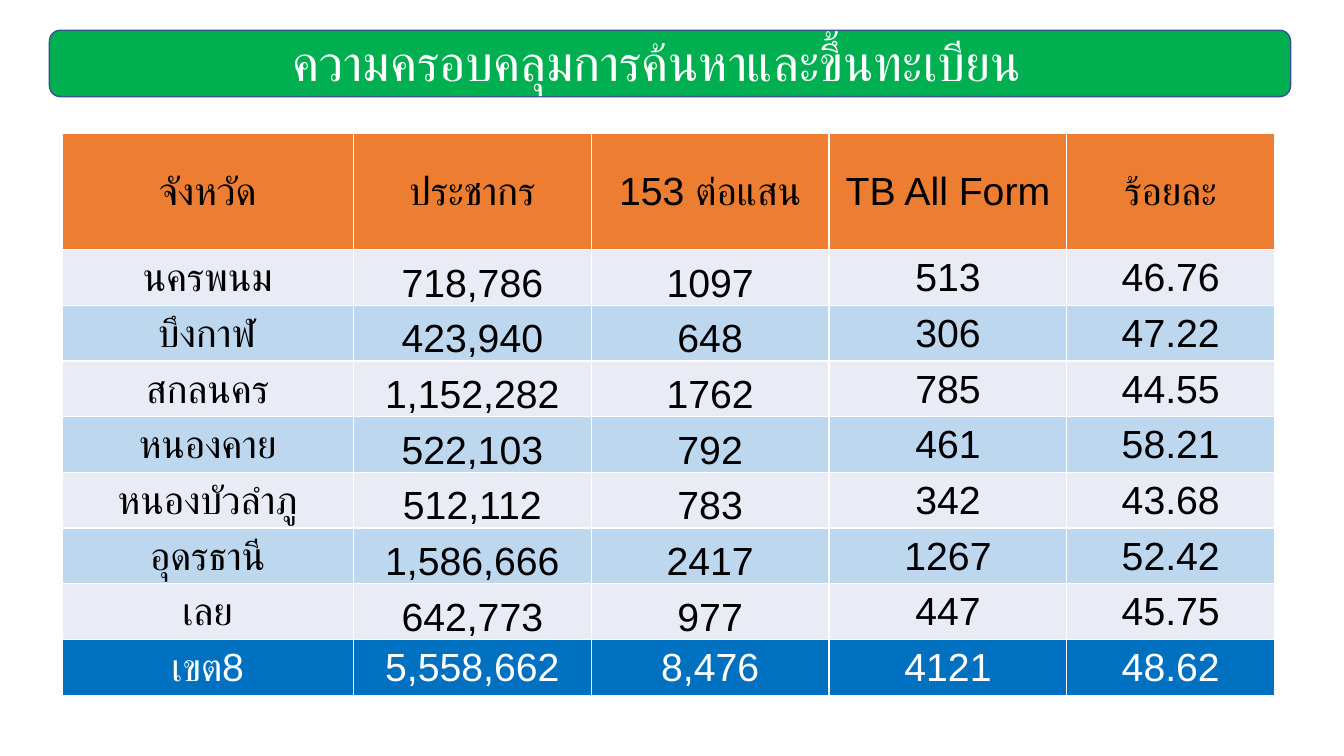
from dataclasses import dataclass

from lxml.etree import SubElement
from pptx import Presentation
from pptx.dml.color import RGBColor
from pptx.enum.shapes import MSO_SHAPE
from pptx.enum.text import MSO_ANCHOR, MSO_AUTO_SIZE, PP_ALIGN
from pptx.oxml.ns import qn
from pptx.slide import Slide
from pptx.util import Inches, Pt

SLIDE_WIDTH = Inches(13.33)
SLIDE_HEIGHT = Inches(7.5)


@dataclass(frozen=True)
class Theme:
    font: str = "Arial"
    title_size: int = 36
    table_size: int = 28
    light_text: str = "FFFFFF"
    dark_text: str = "000000"
    banner: str = "00B050"
    banner_line: str = "325491"
    header: str = "ED7D31"
    bands: tuple[str, str] = ("E9EBF5", "BDD7EE")
    total: str = "0070C0"


@dataclass(frozen=True)
class Frame:
    left: float
    top: float
    width: float
    height: float

    def place(self) -> tuple[int, int, int, int]:
        return (across(self.left), down(self.top), across(self.width), down(self.height))


@dataclass(frozen=True)
class RowStyle:
    fill: str
    text: str
    anchors: tuple[MSO_ANCHOR, ...]


def across(percent: float) -> int:
    return round(SLIDE_WIDTH * percent / 100)


def down(percent: float) -> int:
    return round(SLIDE_HEIGHT * percent / 100)


THEME = Theme()
TITLE = "ความครอบคลุมการค้นหาและขึ้นทะเบียน"
BANNER_FRAME = Frame(3.68, 4, 92.35, 8.8)
TITLE_FRAME = Frame(8.18, 3.47, 81.4, 9.47)
COLUMN_WIDTHS = (21.68, 17.7, 17.7, 17.7, 15.45)
HEADER_HEIGHT = 15.33
ROW_HEIGHT = 7.37

COVERAGE = (
    ("จังหวัด", "ประชากร", "153 ต่อแสน", "TB All Form", "ร้อยละ"),
    ("นครพนม", "718,786", "1097", "513", "46.76"),
    ("บึงกาฬ", "423,940", "648", "306", "47.22"),
    ("สกลนคร", "1,152,282", "1762", "785", "44.55"),
    ("หนองคาย", "522,103", "792", "461", "58.21"),
    ("หนองบัวลำภู", "512,112", "783", "342", "43.68"),
    ("อุดรธานี", "1,586,666", "2417", "1267", "52.42"),
    ("เลย", "642,773", "977", "447", "45.75"),
    ("เขต8", "5,558,662", "8,476", "4121", "48.62"),
)
ROW_HEIGHTS = (HEADER_HEIGHT,) + (ROW_HEIGHT,) * (len(COVERAGE) - 1)
TABLE_FRAME = Frame(4.61, 17.7, sum(COLUMN_WIDTHS), sum(ROW_HEIGHTS))

MIDDLE = (MSO_ANCHOR.MIDDLE,) * 5
PROVINCE = (MSO_ANCHOR.MIDDLE, MSO_ANCHOR.BOTTOM, MSO_ANCHOR.BOTTOM, MSO_ANCHOR.MIDDLE, MSO_ANCHOR.MIDDLE)


def write(para, text: str, size: int, color: str) -> None:
    para.text = text
    para.alignment = PP_ALIGN.CENTER
    para.font.name = THEME.font
    para.font.size = Pt(size)
    para.font.color.rgb = RGBColor.from_string(color)
    properties = para.font._element
    SubElement(properties, qn("a:cs")).set("typeface", THEME.font)


def draw_title(page: Slide) -> None:
    banner = page.shapes.add_shape(MSO_SHAPE.ROUNDED_RECTANGLE, *BANNER_FRAME.place())
    banner.shadow.inherit = False
    banner.fill.solid()
    banner.fill.fore_color.rgb = RGBColor.from_string(THEME.banner)
    banner.line.color.rgb = RGBColor.from_string(THEME.banner_line)
    banner.line.width = Pt(1)

    title = page.shapes.title
    title.left, title.top, title.width, title.height = TITLE_FRAME.place()
    frame = title.text_frame
    frame.word_wrap = True
    frame.auto_size = MSO_AUTO_SIZE.SHAPE_TO_FIT_TEXT
    frame.vertical_anchor = MSO_ANCHOR.TOP
    write(frame.paragraphs[0], TITLE, THEME.title_size, THEME.light_text)
    banner.element.addnext(title.element)


def row_style(index: int) -> RowStyle:
    if index == 0:
        return RowStyle(THEME.header, THEME.dark_text, MIDDLE)
    if index == len(COVERAGE) - 1:
        return RowStyle(THEME.total, THEME.light_text, MIDDLE)
    return RowStyle(THEME.bands[(index - 1) % 2], THEME.dark_text, PROVINCE)


def fill_cell(cell, text: str, style: RowStyle, anchor: MSO_ANCHOR) -> None:
    cell.fill.solid()
    cell.fill.fore_color.rgb = RGBColor.from_string(style.fill)
    cell.vertical_anchor = anchor
    cell.margin_left = cell.margin_top = cell.margin_right = Inches(0.01)
    cell.margin_bottom = 0
    write(cell.text_frame.paragraphs[0], text, THEME.table_size, style.text)


def draw_table(page: Slide) -> None:
    table = page.shapes.add_table(len(COVERAGE), len(COLUMN_WIDTHS), *TABLE_FRAME.place()).table
    table.first_row = False
    table.horz_banding = False
    for column, width in zip(table.columns, COLUMN_WIDTHS):
        column.width = across(width)
    for index, (row, height, texts) in enumerate(zip(table.rows, ROW_HEIGHTS, COVERAGE)):
        row.height = down(height)
        style = row_style(index)
        for cell, text, anchor in zip(row.cells, texts, style.anchors):
            fill_cell(cell, text, style, anchor)


def main() -> None:
    deck = Presentation()
    deck.slide_width = SLIDE_WIDTH
    deck.slide_height = SLIDE_HEIGHT
    page = deck.slides.add_slide(deck.slide_layouts.get_by_name("Title Only"))
    draw_table(page)
    draw_title(page)
    deck.save("out.pptx")


if __name__ == "__main__":
    main()
